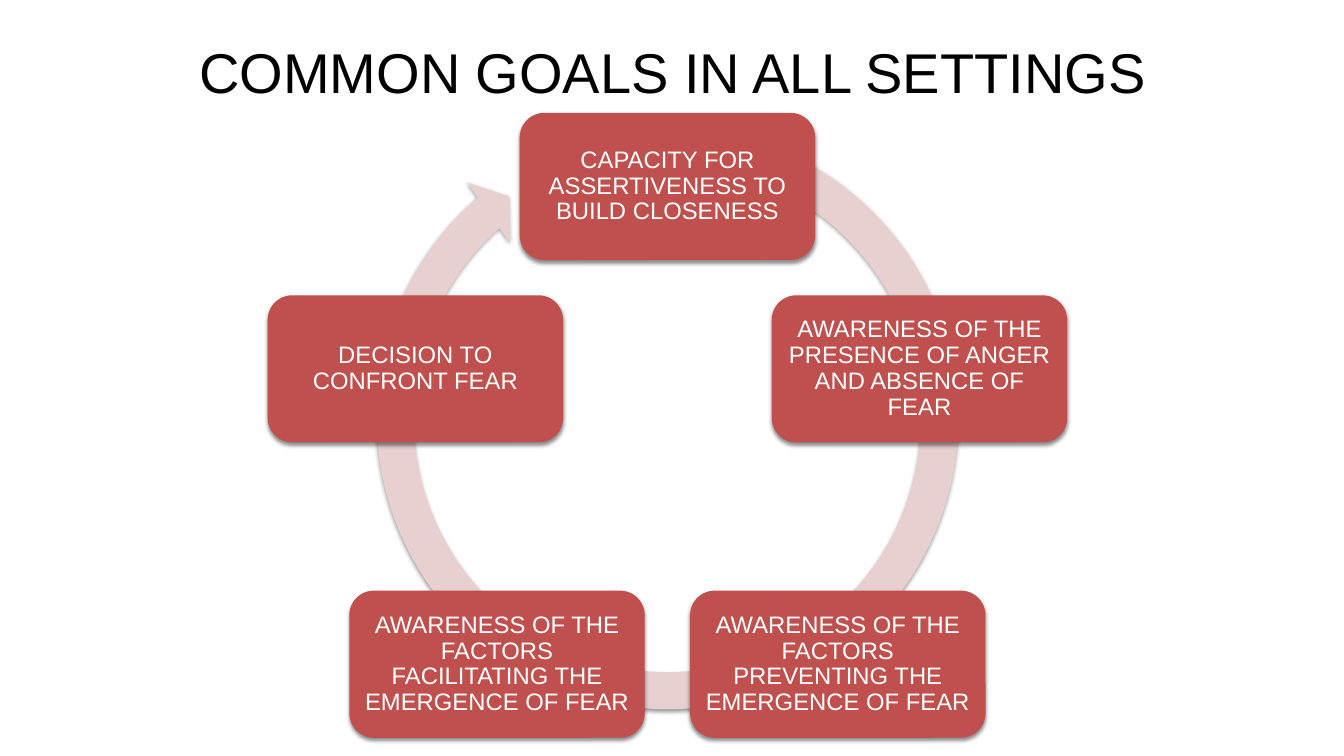
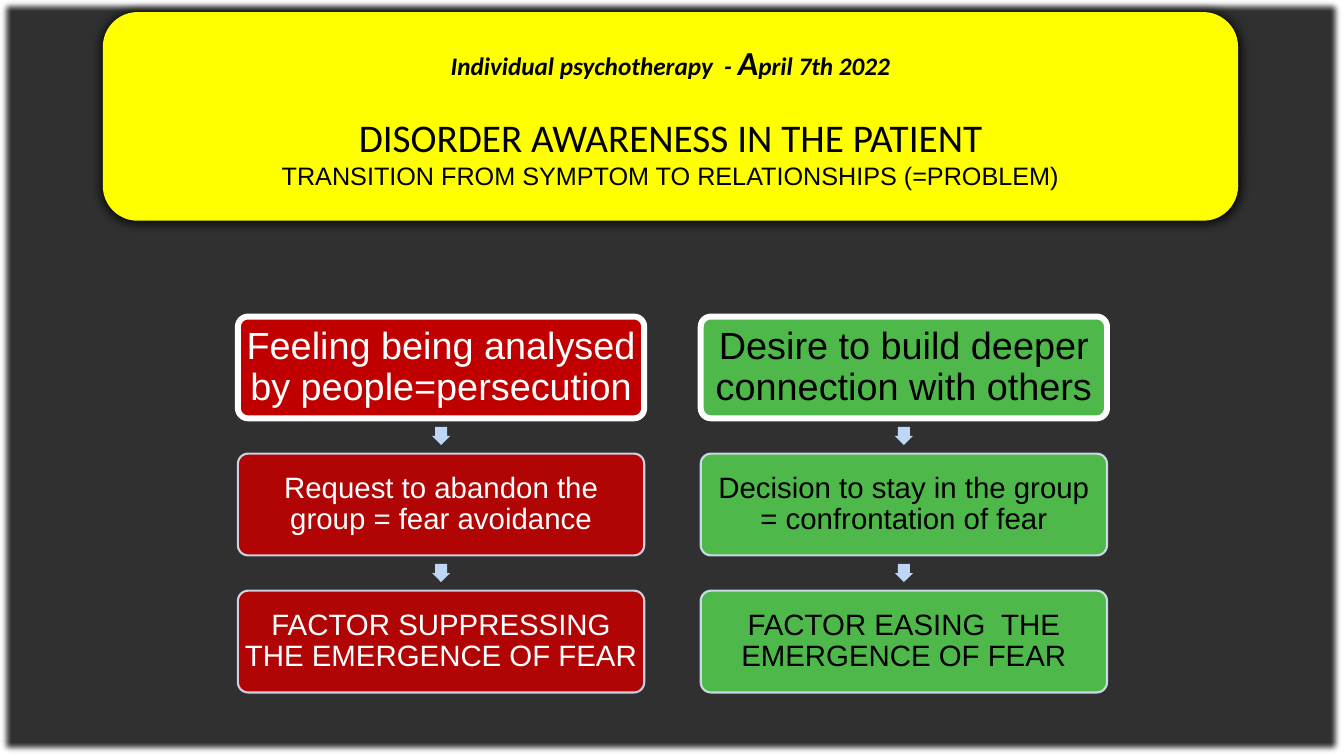
from lxml.etree import SubElement
from pptx import Presentation
from pptx.dml.color import RGBColor
from pptx.enum.shapes import MSO_SHAPE
from pptx.enum.text import MSO_ANCHOR, PP_ALIGN
from pptx.oxml.ns import qn
from pptx.util import Inches, Pt

WHITE, BLACK, YELLOW = "FFFFFF", "000000", "FFFF00"
CORAL, PINK = "C0504D", "E8D0D0"
RED, GREEN = "C00000", "53C74D"
CHARCOAL, ICE, SKY = "303030", "D7E5F9", "BFD7F6"


def rgb(value):
    return RGBColor.from_string(value)


def set_alpha(parent, percent):
    for clr in list(parent.iter(qn("a:srgbClr"))):
        SubElement(clr, qn("a:alpha"), val=str(percent * 1000))


class Deck:
    font = "Arial"

    def __init__(self):
        self.prs = Presentation()
        self.prs.slide_width = Inches(13.33)
        self.prs.slide_height = Inches(7.5)
        self.s = None

    def slide(self, layout):
        self.s = self.prs.slides.add_slide(self.prs.slide_layouts[layout])

    def title(self, text):
        sp = self.s.shapes.title
        sp.left, sp.top = Inches(0.67), Inches(0.3)
        sp.width, sp.height = Inches(12), Inches(0.82)
        sp.text_frame.vertical_anchor = MSO_ANCHOR.MIDDLE
        self.fill_paragraph(sp.text_frame.paragraphs[0], [(text, None)], 40, BLACK)

    def fill_paragraph(self, p, runs, size, color, font=None, bold=False, italic=False):
        p.alignment = PP_ALIGN.CENTER
        p.font.name = font or self.font
        p.font.color.rgb = rgb(color)
        p.font.bold, p.font.italic = bold, italic
        if size:
            p.font.size = Pt(size)
        for text, run_size in runs:
            r = p.add_run()
            r.text = text
            if run_size:
                r.font.size = Pt(run_size)

    def shape(self, kind, x, y, w, h, fill, adj=(), alpha=None):
        sp = self.s.shapes.add_shape(kind, Inches(x), Inches(y), Inches(w), Inches(h))
        sp.shadow.inherit = False
        for i, value in enumerate(adj):
            sp.adjustments[i] = value
        sp.fill.solid()
        sp.fill.fore_color.rgb = rgb(fill)
        if alpha:
            set_alpha(sp._element.spPr, alpha)
        sp.line.fill.background()
        return sp

    def outline(self, sp, color, width, alpha=None):
        sp.line.color.rgb = rgb(color)
        sp.line.width = Pt(width)
        if alpha:
            set_alpha(sp._element.spPr.find(qn("a:ln")), alpha)

    def effect(self, sp, tag, **attrs):
        effects = sp._element.spPr.find(qn("a:effectLst"))
        return SubElement(effects, qn(tag), {k: str(v) for k, v in attrs.items()})

    def shadow(self, sp, opacity, blur, dist):
        node = self.effect(sp, "a:outerShdw", blurRad=Pt(blur), dist=Pt(dist),
                           dir=5400000, rotWithShape=0)
        SubElement(node, qn("a:srgbClr"), val=BLACK)
        set_alpha(node, opacity)

    def label(self, sp, text, size, color, inset):
        tf = sp.text_frame
        tf.word_wrap = True
        tf.vertical_anchor = MSO_ANCHOR.MIDDLE
        tf.margin_left = tf.margin_right = Inches(inset)
        tf.margin_top = tf.margin_bottom = Inches(inset)
        p = tf.paragraphs[0]
        p.line_spacing = 0.9
        self.fill_paragraph(p, [(text, None)], size, color)

    def goal(self, cx, cy, text):
        w, h = 2.93, 1.46
        sp = self.shape(MSO_SHAPE.ROUNDED_RECTANGLE, cx - w / 2, cy - h / 2, w, h, CORAL)
        self.shadow(sp, 45, 3, 2)
        self.label(sp, text, 17, WHITE, 0.07)

    def column(self, x, steps, fill, color, head_alpha=None):
        w, h, top, pitch, arrow = 4.03, 1.01, 3.14, 1.36, 0.18
        for i, text in enumerate(steps):
            y = top + i * pitch
            head = i == 0
            sp = self.shape(MSO_SHAPE.ROUNDED_RECTANGLE, x, y, w, h, fill, [0.1],
                            head_alpha if head else 90)
            if head:
                self.outline(sp, WHITE, 4.25)
                self.label(sp, text, 27, color, 0.04)
            else:
                self.outline(sp, ICE, 1.5, 90)
                self.label(sp, text, 21, color, 0.03)
                gap_middle = y - (pitch - h) / 2
                self.shape(MSO_SHAPE.DOWN_ARROW, x + (w - arrow) / 2,
                           gap_middle - arrow / 2, arrow, arrow, SKY, [0.67, 0.5])

    def banner(self):
        sp = self.shape(MSO_SHAPE.ROUNDED_RECTANGLE, 1.02, 0.12, 11.26, 2.07, YELLOW)
        self.shadow(sp, 100, 8.5, 1)
        tf = sp.text_frame
        tf.word_wrap = True
        tf.vertical_anchor = MSO_ANCHOR.MIDDLE
        date = [("Individual psychotherapy  - ", 18), ("A", 24), ("pril 7th 2022", 18)]
        self.fill_paragraph(tf.paragraphs[0], date, None, BLACK, "Calibri", True, True)
        p = tf.add_paragraph()
        p.space_before = Pt(22)
        self.fill_paragraph(p, [("DISORDER AWARENESS IN THE PATIENT", None)], 28, BLACK,
                            "Calibri")
        self.fill_paragraph(tf.add_paragraph(),
                            [("TRANSITION FROM SYMPTOM TO RELATIONSHIPS (=PROBLEM)", None)],
                            18, BLACK)


def goals_slide(deck):
    deck.slide(5)
    deck.title("COMMON GOALS IN ALL SETTINGS")
    ring = deck.shape(MSO_SHAPE.CIRCULAR_ARROW, 3.55, 1.08, 6.14, 6.14, PINK,
                      [0.06, 3.31, 137.37, 174.1, 0.06])
    deck.shadow(ring, 40, 3, 1.4)
    middle = 6.62
    for dx, cy, text in [
        (0, 1.85, "CAPACITY FOR ASSERTIVENESS TO BUILD CLOSENESS"),
        (2.5, 3.66, "AWARENESS OF THE PRESENCE OF ANGER AND ABSENCE OF FEAR"),
        (1.69, 6.59, "AWARENESS OF THE FACTORS PREVENTING THE EMERGENCE OF FEAR"),
        (-1.69, 6.59, "AWARENESS OF THE FACTORS FACILITATING THE EMERGENCE OF FEAR"),
        (-2.5, 3.66, "DECISION TO CONFRONT FEAR"),
    ]:
        deck.goal(middle + dx, cy, text)


def awareness_slide(deck):
    deck.slide(6)
    backdrop = deck.shape(MSO_SHAPE.RECTANGLE, 0, 0, 13.33, 7.5, CHARCOAL)
    deck.effect(backdrop, "a:softEdge", rad=Pt(5))
    deck.banner()
    deck.column(2.36, ["Feeling being analysed by people=persecution",
                       "Request to abandon the group = fear avoidance",
                       "FACTOR SUPPRESSING THE EMERGENCE OF FEAR"], RED, WHITE)
    deck.column(6.95, ["Desire to build deeper connection with others",
                       "Decision to stay in the group = confrontation of fear",
                       "FACTOR EASING  THE EMERGENCE OF FEAR"], GREEN, BLACK, 90)


def main():
    deck = Deck()
    goals_slide(deck)
    awareness_slide(deck)
    deck.prs.save("out.pptx")


if __name__ == "__main__":
    main()
